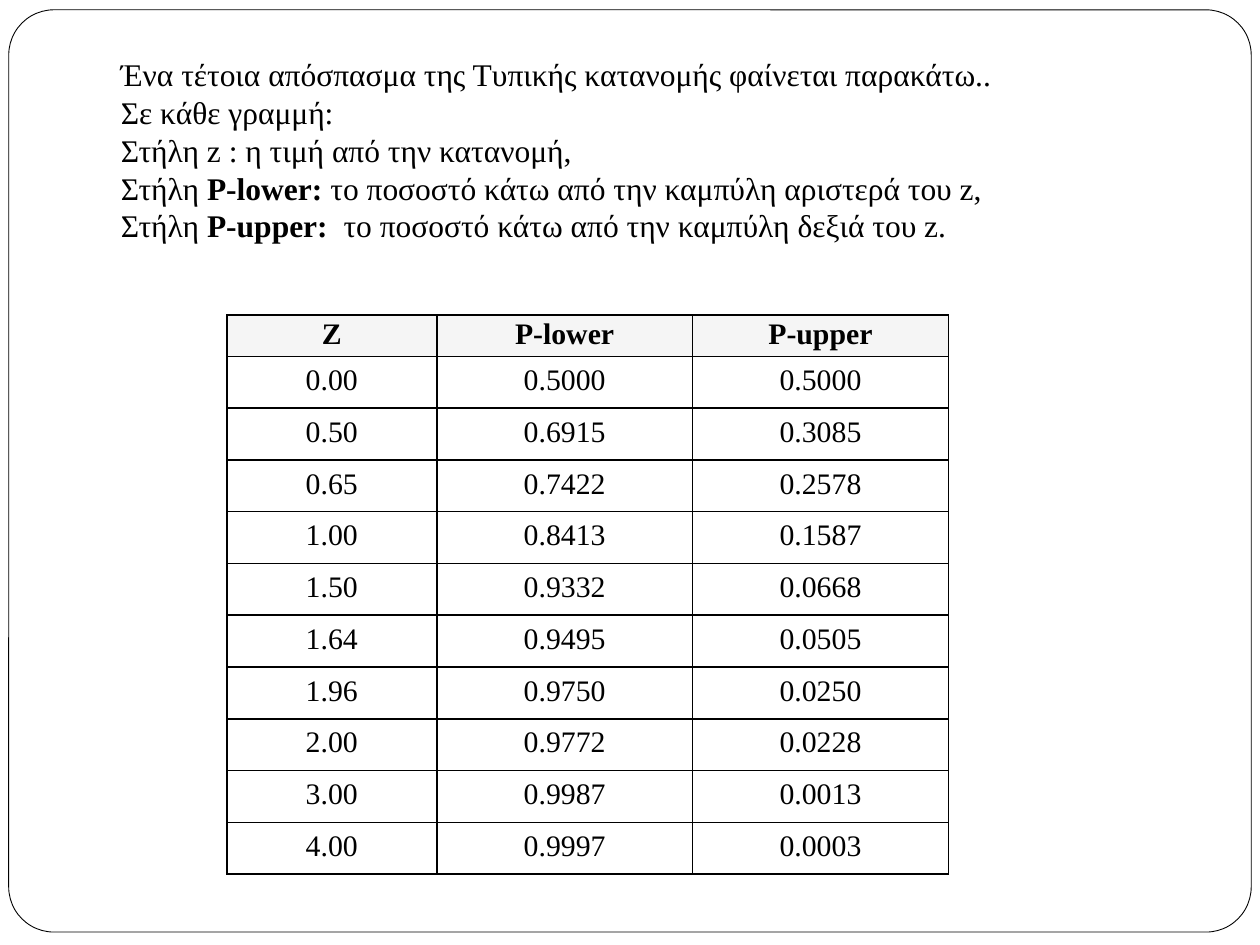
from lxml import etree
from pptx import Presentation
from pptx.dml.color import RGBColor
from pptx.enum.shapes import MSO_SHAPE
from pptx.enum.text import MSO_ANCHOR, PP_ALIGN
from pptx.oxml.ns import qn
from pptx.util import Pt

ROUNDED = MSO_SHAPE.ROUNDED_RECTANGLE
TOP = MSO_ANCHOR.TOP
CENTER = PP_ALIGN.CENTER
BLACK, WHITE, HEADER_GREY = "000000", "FFFFFF", "F5F5F5"


def color(value):
    return RGBColor.from_string(value)


def add_text(paragraph, text, size=18, bold=False, font="Times New Roman"):
    run = paragraph.add_run()
    run.text = text
    run.font.name = font
    run.font.size = Pt(size)
    run.font.bold = bold
    run.font.color.rgb = color(BLACK)


presentation = Presentation()
presentation.slide_width, presentation.slide_height = Pt(720), Pt(540)
slide = presentation.slides.add_slide(presentation.slide_layouts[6])

# Rounded frame around the slide
frame = slide.shapes.add_shape(ROUNDED, Pt(5), Pt(5.6), Pt(710), Pt(527))
frame.adjustments[0] = 0.049
frame.shadow.inherit = False
frame.fill.solid()
frame.fill.fore_color.rgb = color(WHITE)
frame.line.color.rgb = color(BLACK)
frame.line.width = Pt(0.5)

# Introduction: each line is a list of (text, bold) runs
intro_lines = [
    [("Ένα τέτοια απόσπασμα της Τυπικής κατανομής φαίνεται παρακάτω..", False)],
    [("Σε κάθε γραμμή:", False)],
    [("Στήλη z : η τιμή από την κατανομή,", False)],
    [("Στήλη ", False), ("P-lower: ", True),
     ("το ποσοστό κάτω από την καμπύλη αριστερά του z,", False)],
    [("Στήλη ", False), ("P-upper: ", True),
     (" το ποσοστό κάτω από την καμπύλη δεξιά του z.", False)],
]
intro = slide.shapes.add_textbox(Pt(62), Pt(28), Pt(596), Pt(138))
intro.text_frame.word_wrap = True
for index, line in enumerate(intro_lines):
    paragraph = intro.text_frame.paragraphs[0] if index == 0 else intro.text_frame.add_paragraph()
    for text, bold in line:
        add_text(paragraph, text, bold=bold)

# Table of the standard normal distribution
table_rows = [
    ("Z", "P-lower", "P-upper"),
    ("0.00", "0.5000", "0.5000"),
    ("0.50", "0.6915", "0.3085"),
    ("0.65", "0.7422", "0.2578"),
    ("1.00", "0.8413", "0.1587"),
    ("1.50", "0.9332", "0.0668"),
    ("1.64", "0.9495", "0.0505"),
    ("1.96", "0.9750", "0.0250"),
    ("2.00", "0.9772", "0.0228"),
    ("3.00", "0.9987", "0.0013"),
    ("4.00", "0.9997", "0.0003"),
]
column_widths = [120, 146.2, 146.2]
header_height, row_height = 23.6, 29.6
table_height = header_height + row_height * (len(table_rows) - 1)
table = slide.shapes.add_table(
    len(table_rows), len(column_widths),
    Pt(129.6), Pt(180), Pt(sum(column_widths)), Pt(table_height)).table
for column, width in zip(table.columns, column_widths):
    column.width = Pt(width)

for row_index, values in enumerate(table_rows):
    header = row_index == 0
    table.rows[row_index].height = Pt(header_height if header else row_height)
    for column_index, value in enumerate(values):
        cell = table.cell(row_index, column_index)
        cell.margin_left = cell.margin_right = Pt(1.5 if header else 5.8)
        cell.margin_top = cell.margin_bottom = Pt(1.5 if header else 4.3)
        cell.vertical_anchor = TOP
        paragraph = cell.text_frame.paragraphs[0]
        paragraph.alignment = CENTER
        add_text(paragraph, value, size=17, bold=header)

        # Borders come before the fill in the cell properties
        properties = cell._tc.get_or_add_tcPr()
        for side in ("a:lnL", "a:lnR", "a:lnT", "a:lnB"):
            border = etree.SubElement(properties, qn(side), w=str(Pt(1)))
            border_fill = etree.SubElement(border, qn("a:solidFill"))
            etree.SubElement(border_fill, qn("a:srgbClr"), val=BLACK)
        cell.fill.solid()
        cell.fill.fore_color.rgb = color(HEADER_GREY if header else WHITE)

presentation.save("out.pptx")
